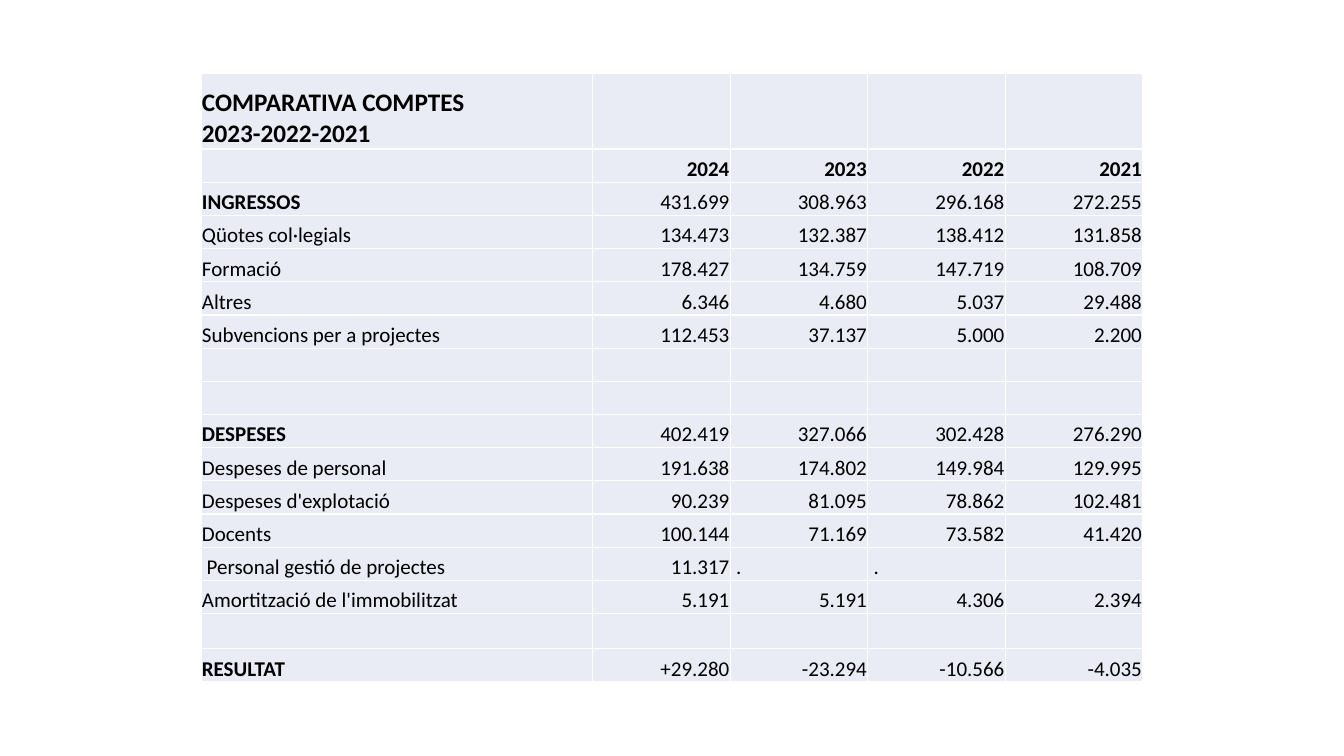
from lxml import etree
from pptx import Presentation
from pptx.dml.color import RGBColor
from pptx.enum.text import MSO_ANCHOR, PP_ALIGN
from pptx.oxml.ns import qn
from pptx.util import Inches, Pt

LEFT, RIGHT = PP_ALIGN.LEFT, PP_ALIGN.RIGHT
BOTTOM = MSO_ANCHOR.BOTTOM

TITLE = "COMPARATIVA COMPTES\n2023-2022-2021"
HEADINGS = {"INGRESSOS", "DESPESES", "RESULTAT"}
BLANK = ("",) * 5
ACCOUNTS = [
    (TITLE, "", "", "", ""),
    ("", "2024", "2023", "2022", "2021"),
    ("INGRESSOS", "431.699", "308.963", "296.168", "272.255"),
    ("Qüotes col·legials", "134.473", "132.387", "138.412", "131.858"),
    ("Formació", "178.427", "134.759", "147.719", "108.709"),
    ("Altres", "6.346", "4.680", "5.037", "29.488"),
    ("Subvencions per a projectes", "112.453", "37.137", "5.000", "2.200"),
    BLANK,
    BLANK,
    ("DESPESES", "402.419", "327.066", "302.428", "276.290"),
    ("Despeses de personal", "191.638", "174.802", "149.984", "129.995"),
    ("Despeses d'explotació", "90.239", "81.095", "78.862", "102.481"),
    ("Docents", "100.144", "71.169", "73.582", "41.420"),
    (" Personal gestió de projectes", "11.317", " .", " .", ""),
    ("Amortització de l'immobilitzat", "5.191", "5.191", "4.306", "2.394"),
    BLANK,
    ("RESULTAT", "+29.280", "-23.294", "-10.566", "-4.035"),
]
COLUMN_WEIGHTS = [2.85] + [1] * 4
ROW_WEIGHTS = [2.27] + [1] * 14 + [1.06, 1]


def color(value):
    return RGBColor.from_string(value)


def write(frame, text, font="Calibri", size=15, bold=False, ink="000000", align=LEFT):
    for index, line in enumerate(text.split("\n")):
        para = frame.paragraphs[0] if index == 0 else frame.add_paragraph()
        para.alignment = align
        if not line:
            etree.SubElement(para._p, qn("a:endParaRPr"), sz=str(size * 100))
            continue
        span = para.add_run()
        span.text = line
        span.font.name = font
        span.font.size = Pt(size)
        span.font.bold = bold
        span.font.color.rgb = color(ink)


class Page:
    """Hold the style and the current slide, with lengths in percent of its size."""

    fill = "E9EBF5"
    border = "FFFFFF"
    border_width = 1
    inset = 0.01

    def __init__(self, deck):
        self.width, self.height = deck.slide_width, deck.slide_height
        self.slide = deck.slides.add_slide(deck.slide_layouts[6])

    def table(self, left, top, width, height, columns, rows):
        box = [round(share * side / 100) for share, side in
               zip((left, top, width, height), (self.width, self.height) * 2)]
        table = self.slide.shapes.add_table(len(rows), len(columns), *box).table
        table.first_row = table.horz_banding = False
        for lines, weights, extent, side in (
            (table.columns, columns, box[2], "width"),
            (table.rows, rows, box[3], "height"),
        ):
            for line, weight in zip(lines, weights):
                setattr(line, side, round(extent * weight / sum(weights)))
        return table

    def cell(self, cell, text, **style):
        cell.margin_left = cell.margin_right = cell.margin_top = Inches(self.inset)
        cell.margin_bottom = 0
        cell.vertical_anchor = BOTTOM
        cell.fill.solid()
        cell.fill.fore_color.rgb = color(self.fill)
        self.borders(cell)
        write(cell.text_frame, text, **style)

    def borders(self, cell):
        properties = cell._tc.get_or_add_tcPr()
        for position, side in enumerate(("lnL", "lnR", "lnT", "lnB")):
            line = etree.Element(qn(f"a:{side}"), w=str(Pt(self.border_width)))
            solid = etree.SubElement(line, qn("a:solidFill"))
            etree.SubElement(solid, qn("a:srgbClr"), val=self.border)
            properties.insert(position, line)


def main():
    deck = Presentation()
    deck.slide_width, deck.slide_height = Inches(13.33), Inches(7.5)
    page = Page(deck)
    table = page.table(14.95, 9.75, 70.1, 80.5, COLUMN_WEIGHTS, ROW_WEIGHTS)
    for row, values in enumerate(ACCOUNTS):
        for column, text in enumerate(values):
            is_number = column > 0 and not text.endswith(".")
            page.cell(
                table.cell(row, column),
                text,
                size=18 if text == TITLE else 15,
                bold=row < 2 or text in HEADINGS,
                align=RIGHT if is_number else LEFT,
            )
    deck.save("out.pptx")


if __name__ == "__main__":
    main()
